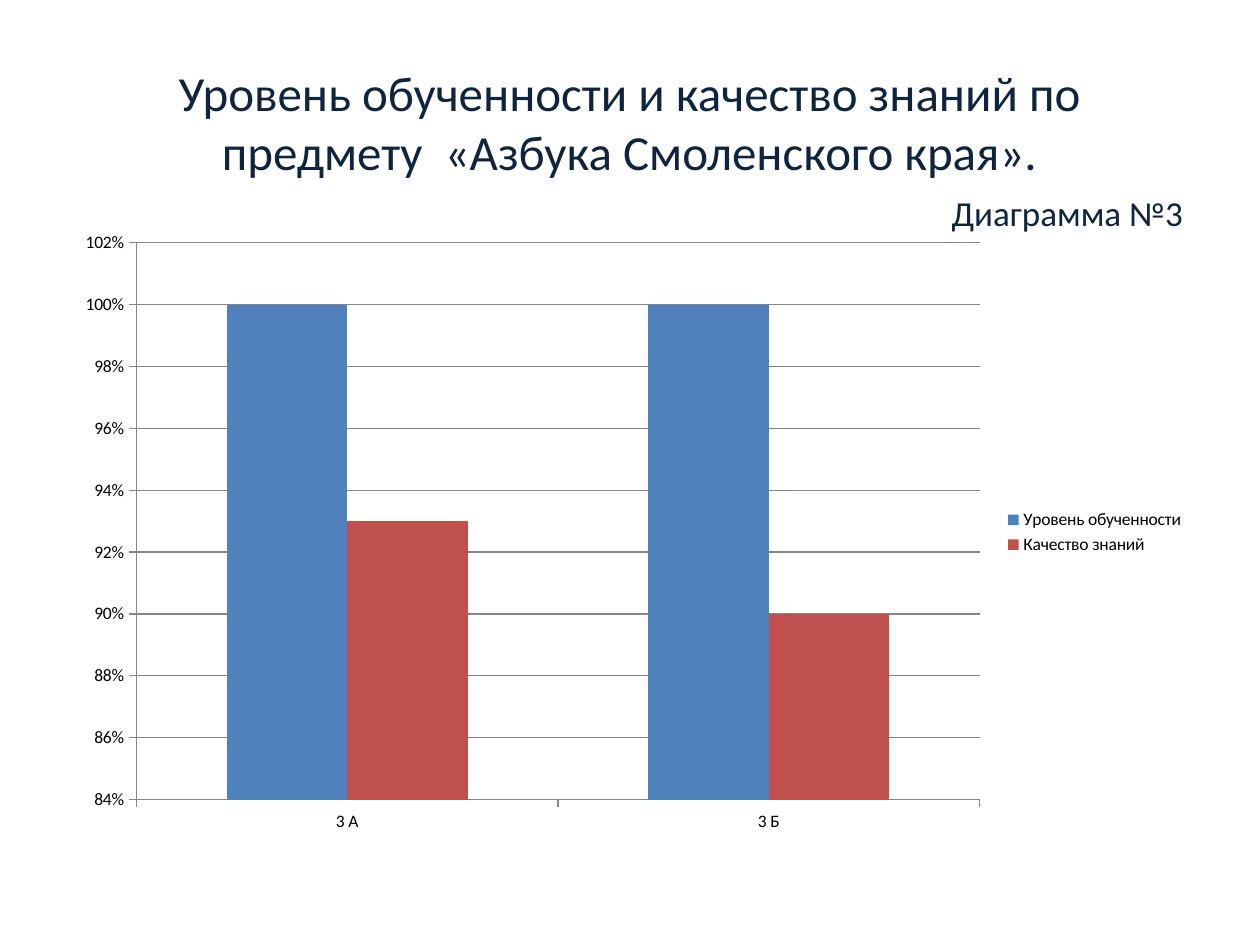
from dataclasses import dataclass

from pptx import Presentation
from pptx.chart.data import CategoryChartData as Data
from pptx.dml.color import RGBColor as RGB
from pptx.enum.chart import XL_CHART_TYPE as Kind, XL_LEGEND_POSITION as Side
from pptx.enum.chart import XL_TICK_MARK as Tick
from pptx.enum.text import MSO_ANCHOR as Anchor, MSO_AUTO_SIZE as Fit
from pptx.enum.text import PP_ALIGN as Align
from pptx.util import Inches, Pt


@dataclass(frozen=True)
class Theme:
    """Colours, font and type sizes of the slide."""
    font: str = "Calibri"
    navy: RGB = RGB(0x0F, 0x24, 0x3E)
    black: RGB = RGB(0, 0, 0)
    grey: RGB = RGB(0x87, 0x87, 0x87)
    bars: tuple = (RGB(0x4F, 0x81, 0xBD), RGB(0xC0, 0x50, 0x4D))
    head: Pt = Pt(28)
    label: Pt = Pt(20)
    small: Pt = Pt(10)


THEME = Theme()


def set_font(font, size, color):
    """Apply the theme font with a size and colour."""
    font.name, font.size, font.bold = THEME.font, size, False
    font.color.rgb = color


def add_title(slide, box):
    """Fill the title with a centred heading and a right-aligned label."""
    title = slide.shapes.title
    title.left, title.top, title.width, title.height = map(Inches, box)
    frame = title.text_frame
    frame.auto_size, frame.word_wrap = Fit.NONE, True
    frame.vertical_anchor = Anchor.BOTTOM
    frame.margin_left = frame.margin_right = Inches(0.25)
    frame.margin_bottom = Inches(0.16)
    head, label = frame.paragraphs[0], frame.add_paragraph()
    head.text = ("Уровень обученности и качество знаний по\v"
                 "предмету  «Азбука Смоленского края».")
    label.text = "Диаграмма №3"
    head.alignment, label.alignment = Align.CENTER, Align.RIGHT
    head.space_before, label.space_before = Pt(0), Pt(6)
    set_font(head.font, THEME.head, THEME.navy)
    set_font(label.font, THEME.label, THEME.navy)


def style_axis(axis):
    """Give an axis a grey line and outside ticks."""
    axis.major_tick_mark, axis.minor_tick_mark = Tick.OUTSIDE, Tick.NONE
    axis.format.line.color.rgb = THEME.grey
    axis.format.line.width = Pt(0.75)


def add_bars(slide, box):
    """Draw the clustered columns of both classes."""
    data = Data(number_format="0%")
    data.categories = ["3 А", "3 Б"]
    data.add_series("Уровень обученности", (1, 1))
    data.add_series("Качество знаний", (0.93, 0.9))
    chart = slide.shapes.add_chart(
        Kind.COLUMN_CLUSTERED, *map(Inches, box), data).chart
    set_font(chart.font, THEME.small, THEME.black)
    chart.has_title = False
    chart.has_legend = True
    chart.legend.position = Side.RIGHT
    chart.legend.include_in_layout = False
    plot = chart.plots[0]
    plot.gap_width, plot.overlap, plot.vary_by_categories = 150, 0, False
    for series, color in zip(plot.series, THEME.bars):
        series.format.fill.solid()
        series.format.fill.fore_color.rgb = color
    scale = chart.value_axis
    for axis in (chart.category_axis, scale):
        style_axis(axis)
    scale.minimum_scale, scale.maximum_scale = 0.84, 1.02
    scale.major_unit = 0.02
    scale.tick_labels.number_format = "0%"
    scale.tick_labels.number_format_is_linked = False
    scale.has_major_gridlines = True
    grid = scale.major_gridlines.format.line
    grid.color.rgb, grid.width = THEME.grey, Pt(0.75)


def main():
    """Build and save the slide."""
    deck = Presentation()
    deck.slide_width, deck.slide_height = Inches(10), Inches(7.5)
    slide = deck.slides.add_slide(deck.slide_layouts[5])
    add_title(slide, (0.35, 0.76, 9.29, 1.25))
    add_bars(slide, (0.5, 1.75, 9, 4.95))
    deck.save("out.pptx")


if __name__ == "__main__":
    main()
